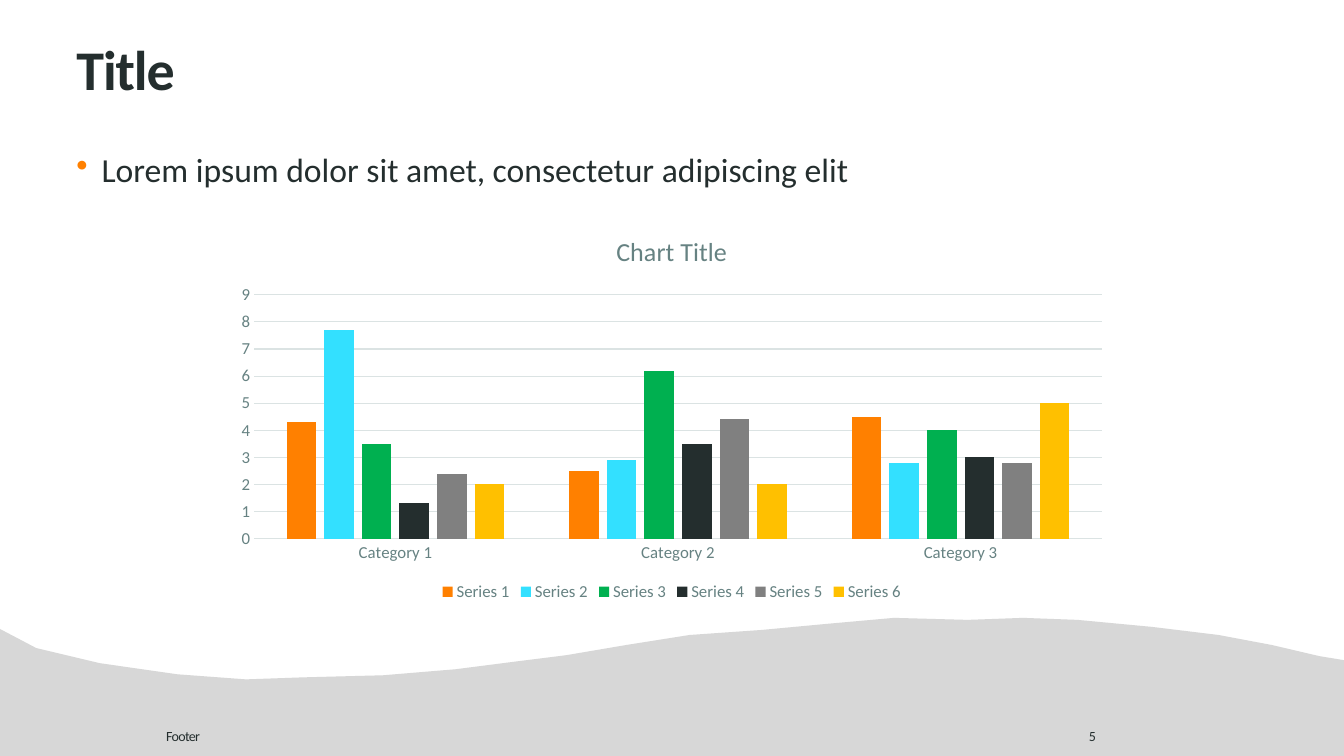
from lxml import etree
from pptx import Presentation, util as u
from pptx.chart.data import CategoryChartData
from pptx.dml.color import RGBColor
from pptx.enum import chart as ch, text as t
from pptx.oxml import ns

WIDTH, HEIGHT = u.Inches(13.33), u.Inches(7.5)
FONT = "Calibri"
INK = RGBColor(0x24, 0x2E, 0x2E)
MUTED = RGBColor(0x66, 0x82, 0x82)
RULE = RGBColor(0xDB, 0xE3, 0xE3)
WAVE = RGBColor(0xD7, 0xD7, 0xD7)
ORANGE = RGBColor(0xFF, 0x80, 0x00)
CYAN = RGBColor(0x33, 0xE0, 0xFF)
GREEN = RGBColor(0x00, 0xB0, 0x50)
GREY = RGBColor(0x80, 0x80, 0x80)
YELLOW = RGBColor(0xFF, 0xC0, 0x00)

SERIES = [
    (ORANGE, (4.3, 2.5, 4.5)),
    (CYAN, (7.7, 2.9, 2.8)),
    (GREEN, (3.5, 6.2, 4)),
    (INK, (1.3, 3.5, 3)),
    (GREY, (2.4, 4.4, 2.8)),
    (YELLOW, (2, 2, 5)),
]
WAVE_CREST = [
    (0, 83.2), (2.7, 85.73), (7.43, 87.73), (13.2, 89.2), (18.3, 89.87),
    (22.58, 89.6), (28.5, 89.33), (33.9, 88.53), (38.55, 87.47),
    (42.15, 86.67), (46.58, 85.33), (51.3, 84), (56.7, 83.33),
    (61.5, 82.53), (66.53, 81.73), (72, 82), (76.13, 81.73),
    (80.18, 82), (85.73, 82.93), (90.68, 84), (94.65, 85.33),
    (98.18, 86.8), (100, 87.33),
]


def across(percent):
    """Turn a percentage of the slide width into a length."""
    return round(WIDTH * percent / 100)


def down(percent):
    """Turn a percentage of the slide height into a length."""
    return round(HEIGHT * percent / 100)


def area(left, top, width, height):
    """Turn percentages of the slide into a position and size."""
    return across(left), down(top), across(width), down(height)


def style_font(font, size, color, bold=False):
    """Apply the slide's typeface with a size and colour."""
    font.name, font.size, font.bold = FONT, u.Pt(size), bold
    font.color.rgb = color


def add_bullet(paragraph, color):
    """Give a paragraph a coloured bullet and a hanging indent."""
    properties = paragraph._p.get_or_add_pPr()
    indent = u.Inches(0.25)
    properties.set("marL", str(indent))
    properties.set("indent", str(-indent))
    tint = etree.SubElement(properties, ns.qn("a:buClr"))
    etree.SubElement(tint, ns.qn("a:srgbClr")).set("val", str(color))
    etree.SubElement(properties, ns.qn("a:buChar")).set("char", "•")


def add_text(slide, words, place, size, bold=False, anchor=t.MSO_ANCHOR.TOP,
             align=t.PP_ALIGN.LEFT, bullet=None, leading=1.0, tracking=0):
    """Add a wrapped line of formatted text."""
    frame = slide.shapes.add_textbox(*area(*place)).text_frame
    frame.word_wrap, frame.vertical_anchor = True, anchor
    paragraph = frame.paragraphs[0]
    if bullet is not None:
        add_bullet(paragraph, bullet)
    paragraph.alignment, paragraph.line_spacing = align, leading
    run = paragraph.add_run()
    run.text = words
    style_font(run.font, size, INK, bold)
    if tracking:
        run._r.get_or_add_rPr().set("spc", str(round(tracking * 100)))


def add_wave(slide):
    """Draw the grey wave along the foot of the slide."""
    outline = [(across(x), down(y))
               for x, y in WAVE_CREST + [(100, 100), (0, 100)]]
    builder = slide.shapes.build_freeform(*outline[0])
    builder.add_line_segments(outline[1:], close=True)
    wave = builder.convert_to_shape()
    wave.shadow.inherit = False
    wave.fill.solid()
    wave.fill.fore_color.rgb = WAVE
    wave.line.fill.background()


def style_axis(axis):
    """Remove the tick marks of an axis and set its labels."""
    axis.major_tick_mark = axis.minor_tick_mark = ch.XL_TICK_MARK.NONE
    style_font(axis.tick_labels.font, 12, MUTED)


def draw_rule(line):
    """Give a chart line the pale hairline look."""
    line.color.rgb, line.width = RULE, u.Pt(0.75)


def add_columns(slide, place):
    """Add the clustered column chart."""
    data = CategoryChartData()
    data.categories = [f"Category {n}" for n in range(1, 4)]
    for number, (_, values) in enumerate(SERIES, 1):
        data.add_series(f"Series {number}", values)
    chart = slide.shapes.add_chart(
        ch.XL_CHART_TYPE.COLUMN_CLUSTERED, *area(*place), data).chart
    style_font(chart.font, 10, INK)

    chart.has_title = True
    heading = chart.chart_title.text_frame
    heading.text = "Chart Title"
    style_font(heading.paragraphs[0].runs[0].font, 18.6, MUTED)
    chart.chart_title.include_in_layout = False

    chart.has_legend = True
    chart.legend.position = ch.XL_LEGEND_POSITION.BOTTOM
    chart.legend.include_in_layout = False
    style_font(chart.legend.font, 12, MUTED)

    categories, scale = chart.category_axis, chart.value_axis
    style_axis(categories)
    style_axis(scale)
    draw_rule(categories.format.line)
    scale.format.line.fill.background()
    scale.minimum_scale, scale.maximum_scale, scale.major_unit = 0, 9, 1
    draw_rule(scale.major_gridlines.format.line)

    plot = chart.plots[0]
    plot.gap_width, plot.overlap, plot.vary_by_categories = 219, -27, False
    for columns, (color, _) in zip(plot.series, SERIES):
        columns.invert_if_negative = False
        columns.format.fill.solid()
        columns.format.fill.fore_color.rgb = color


def main():
    """Build and save the slide."""
    deck = Presentation()
    deck.slide_width, deck.slide_height = WIDTH, HEIGHT
    slide = deck.slides.add_slide(deck.slide_layouts[6])
    add_wave(slide)
    add_text(slide, "5", (78, 93.73, 4.28, 5.33), 10,
             anchor=t.MSO_ANCHOR.BOTTOM, align=t.PP_ALIGN.RIGHT)
    add_text(slide, "Title", (4.95, 1.87, 90.15, 14.27), 40, bold=True,
             anchor=t.MSO_ANCHOR.MIDDLE, tracking=-0.8)
    add_text(slide, "Lorem ipsum dolor sit amet, consectetur adipiscing elit",
             (4.95, 19.6, 90.15, 61.2), 24, bullet=ORANGE, leading=0.9)
    add_text(slide, "Footer", (11.63, 93.73, 66.38, 5.33), 10,
             anchor=t.MSO_ANCHOR.BOTTOM, tracking=-0.5)
    add_columns(slide, (16.65, 28.53, 66.67, 51.6))
    deck.save("out.pptx")


if __name__ == "__main__":
    main()
